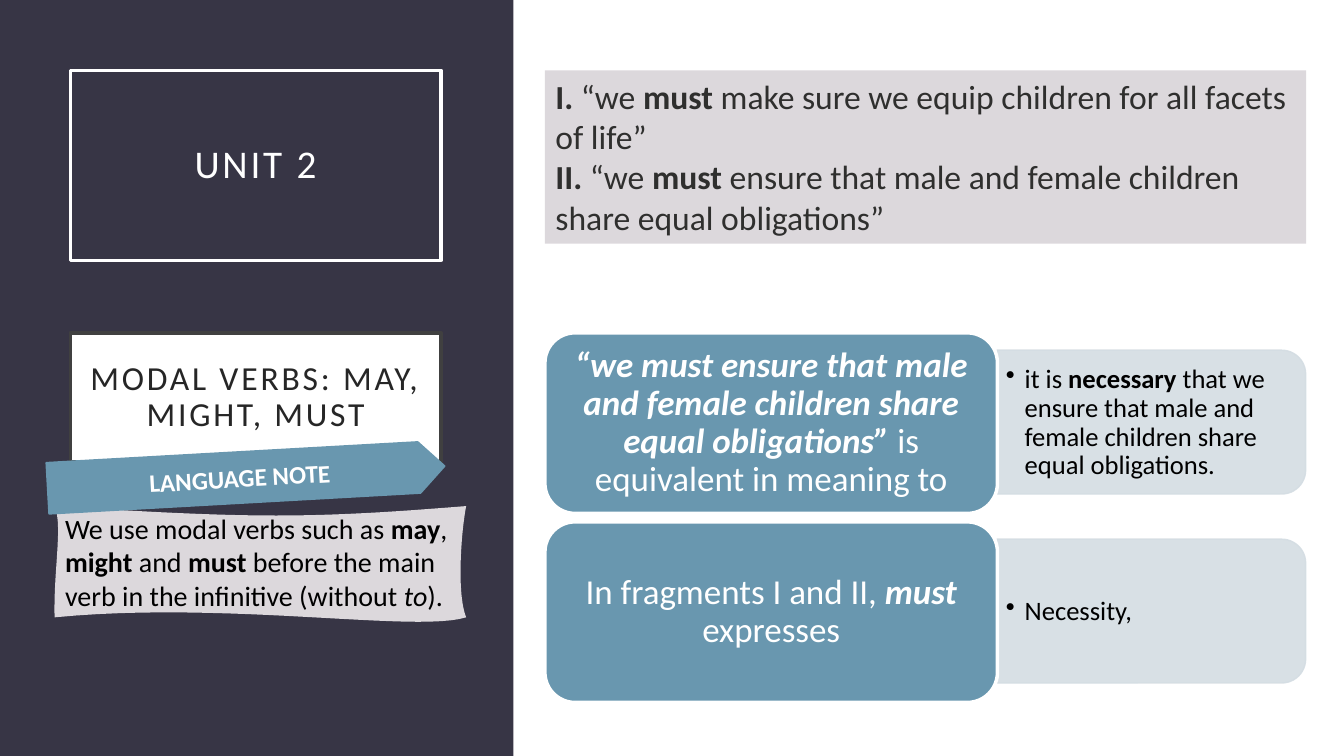
import pptx
import pptx.util
import pptx.dml.color
import pptx.enum.shapes
import pptx.enum.text
import pptx.oxml.ns
import lxml.etree

PX = 9525  # EMU in one px, 96 px to the inch
FONT = "Calibri"
COLORS = {
    "navy": "373545", "white": "FFFFFF", "frame": "404040", "ink": "262626",
    "mauve": "DCD8DC", "blue": "6997AF", "pale": "D4DDE3",
    "quote": "2F2F2E", "black": "000000",
}
SHAPE = pptx.enum.shapes.MSO_SHAPE
ALIGN = pptx.enum.text.PP_ALIGN
ANCHOR = pptx.enum.text.MSO_ANCHOR
qn = pptx.oxml.ns.qn


def rgb(name):
    return pptx.dml.color.RGBColor.from_string(COLORS[name])


def write(tf, paragraphs, size, color, align=ALIGN.LEFT, spacing=1.0,
          inset=(10, 5), anchor=ANCHOR.MIDDLE, tracking=0):
    """Each paragraph is a list of (text, style); style holds b and/or i."""
    tf.word_wrap = True
    tf.auto_size = pptx.enum.text.MSO_AUTO_SIZE.NONE
    tf.vertical_anchor = anchor
    tf.margin_left = tf.margin_right = inset[0] * PX
    tf.margin_top = tf.margin_bottom = inset[1] * PX
    for n, runs in enumerate(paragraphs):
        p = tf.add_paragraph() if n else tf.paragraphs[0]
        p.alignment, p.line_spacing = align, spacing
        p.font.name, p.font.size = FONT, pptx.util.Pt(size)
        p.font.color.rgb = rgb(color)
        for text, style in runs:
            r = p.add_run()
            r.text = text
            r.font.bold, r.font.italic = "b" in style, "i" in style
            if tracking:
                r.font._element.set("spc", str(tracking))


prs = pptx.Presentation()
prs.slide_width, prs.slide_height = 1280 * PX, 720 * PX
s = prs.slides.add_slide(prs.slide_layouts[5])

# Title in its white frame
title = s.shapes.title
title.left, title.top, title.width, title.height = [v * PX for v in (67, 67, 353, 181)]
title.line.color.rgb = rgb("white")
title.line.width = pptx.util.Pt(2.5)
write(title.text_frame, [[("UNIT 2", "")]], 28, "white", ALIGN.CENTER, 0.9,
      (19, 19), tracking=200)

# Wavy note panel: four Bezier edges, each with two controls and an end point
corner = (52, 482)
edges = [
    ((240, 494), (296, 494), (444, 482)),
    ((439, 508), (435, 566), (444, 588)),
    ((396, 603), (217, 572), (52, 588)),
    ((51, 541), (60, 501), (52, 482)),
]
points, a = [], corner
for b, c, d in edges:
    for step in range(1, 25):
        t = step / 24
        u = 1 - t
        points.append(tuple(
            round(PX * (u**3 * a[k] + 3*u*u*t * b[k] + 3*u*t*t * c[k] + t**3 * d[k]))
            for k in (0, 1)))
    a = d
builder = s.shapes.build_freeform(corner[0] * PX, corner[1] * PX)
builder.add_line_segments(points, close=True)
note = builder.convert_to_shape()

# Preset shapes: kind, x, y, w, h, fill, line, line width
ROW_TOP, ROW_STEP = 317, 180
specs = {
    "sidebar": (SHAPE.RECTANGLE, 0, 0, 489, 720, "navy", None, 0),
    "topic": (SHAPE.RECTANGLE, 67, 317, 353, 123, "white", "frame", 2.5),
    "ribbon": (SHAPE.PENTAGON, 45, 430, 379, 49, "blue", "blue", 1),
    "quotes": (SHAPE.RECTANGLE, 519, 67, 725, 165, "mauve", None, 0),
}
for row in (0, 1):
    y = ROW_TOP + row * ROW_STEP
    specs[f"answer{row}"] = (SHAPE.ROUND_2_SAME_RECTANGLE, 1028, y - 62, 137, 294,
                             "pale", "pale", 1)
    specs[f"prompt{row}"] = (SHAPE.ROUNDED_RECTANGLE, 519, y, 431, 172,
                             "blue", "white", 2.5)
shapes = {}
for name, (kind, x, y, w, h, fill, line, width) in specs.items():
    sp = shapes[name] = s.shapes.add_shape(kind, x * PX, y * PX, w * PX, h * PX)
    sp.shadow.inherit = False
    sp.fill.solid()
    sp.fill.fore_color.rgb = rgb(fill)
    if line:
        sp.line.color.rgb = rgb(line)
        sp.line.width = pptx.util.Pt(width)
    else:
        sp.line.fill.background()

note.shadow.inherit = False
note.fill.solid()
note.fill.fore_color.rgb = rgb("mauve")
note.line.fill.background()
shapes["ribbon"].rotation = 356.8

# Stacking: sidebar at the back, note between topic and ribbon
s.shapes._spTree.insert(2, shapes["sidebar"]._element)
shapes["topic"]._element.addnext(note._element)

# Left column text
write(shapes["topic"].text_frame, [[("MODAL VERBS: MAY, MIGHT, MUST", "")]], 24, "ink",
      ALIGN.CENTER, 0.9, (19, 19), tracking=200)
write(shapes["ribbon"].text_frame, [[("LANGUAGE NOTE", "b")]], 18, "white", ALIGN.CENTER)
write(note.text_frame, [[
    ("We use modal verbs such as ", ""), ("may", "b"), (", ", ""), ("might", "b"),
    (" and ", ""), ("must", "b"),
    (" before the main verb in the infinitive (without ", ""), ("to", "i"), (").", ""),
]], 20, "black", anchor=ANCHOR.TOP)

# Quoted fragments
write(shapes["quotes"].text_frame, [
    [("I. ", "b"), ("“we ", ""), ("must", "b"),
     (" make sure we equip children for all facets of life”", "")],
    [("II. ", "b"), ("“we ", ""), ("must", "b"),
     (" ensure that male and female children share equal obligations”", "")],
], 24, "quote", anchor=ANCHOR.TOP)

# Prompts with their bulleted answers
rows = [
    ([("“we must ensure that male and female children share equal obligations” ", "bi"),
      ("is equivalent in meaning to", "")],
     [("it is ", ""), ("necessary", "b"),
      (" that we ensure that male and female children share equal obligations.", "")]),
    ([("In fragments I and II, ", ""), ("must ", "bi"), ("expresses", "")],
     [("Necessity,", "")]),
]
for row, (prompt, answer) in enumerate(rows):
    write(shapes[f"prompt{row}"].text_frame, [prompt], 25, "white", ALIGN.CENTER, 0.9)
    panel = shapes[f"answer{row}"]
    panel.rotation = 90
    for clr in panel._element.spPr.iter(qn("a:srgbClr")):
        lxml.etree.SubElement(clr, qn("a:alpha"), val="90000")
    tb = s.shapes.add_textbox(950 * PX, (ROW_TOP + row * ROW_STEP + 24) * PX,
                              287 * PX, 124 * PX)
    write(tb.text_frame, [answer], 19, "black", spacing=0.9, inset=(8, 4))
    pPr = tb.text_frame.paragraphs[0]._p.get_or_add_pPr()
    pPr.set("marL", str(18 * PX))
    pPr.set("indent", str(-18 * PX))
    bullet = lxml.etree.Element(qn("a:buChar"), char="•")
    pPr.find(qn("a:defRPr")).addprevious(bullet)

prs.save("out.pptx")
